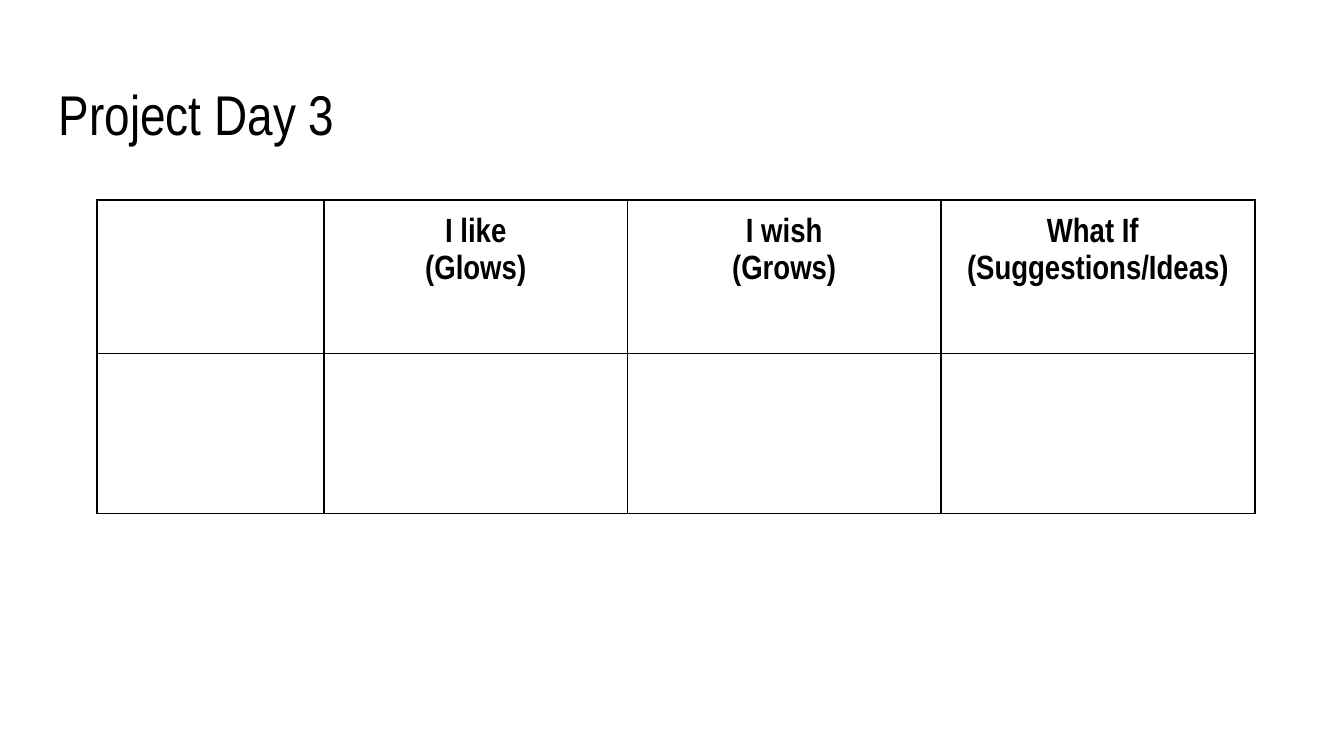
from dataclasses import dataclass

from lxml import etree
from pptx import Presentation
from pptx.dml.color import RGBColor
from pptx.enum import text
from pptx.oxml import ns
from pptx.util import Inches, Pt

BLACK = RGBColor(0, 0, 0)
WHITE = RGBColor(255, 255, 255)
PAGE_WIDTH = Inches(10)
PAGE_HEIGHT = PAGE_WIDTH * 9 // 16
COLUMN_INCHES = (1.69, 2.26, 2.33, 2.34)
ROW_INCHES = (1.14, 1.19)
MARGIN = Inches(0.1)
SIDES = ("left", "right", "top", "bottom")


@dataclass(frozen=True)
class Area:
    left: float
    top: float
    width: float
    height: float

    def lengths(self) -> tuple[int, ...]:
        return tuple(Inches(value) for value in
                     (self.left, self.top, self.width, self.height))


@dataclass(frozen=True)
class Line:
    words: str
    indent: float = 0


@dataclass(frozen=True)
class Heading:
    column: int
    lines: tuple[Line, Line]


HEADINGS = (
    Heading(1, (Line("I like"), Line("(Glows)"))),
    Heading(2, (Line("I wish"), Line("(Grows)"))),
    Heading(3, (Line("What If", 0.69), Line("(Suggestions/Ideas)"))),
)
TITLE_AREA = Area(0.34, 0.49, 9.32, 0.63)
TABLE_AREA = Area(0.72, 1.49, sum(COLUMN_INCHES), sum(ROW_INCHES))


def set_values(target, values: dict) -> None:
    for name, value in values.items():
        setattr(target, name, value)


def set_margins(target) -> None:
    set_values(target, {f"margin_{side}": MARGIN for side in SIDES})


def write_span(para, words: str, size: int, bold: bool) -> None:
    span = para.add_run()
    span.text = words
    set_values(span.font, {"name": "Arial Narrow", "size": Pt(size), "bold": bold})
    span.font.color.rgb = BLACK


def add_title(page, words: str) -> None:
    frame = page.shapes.add_textbox(*TITLE_AREA.lengths()).text_frame
    set_values(frame, {"word_wrap": True, "vertical_anchor": text.MSO_ANCHOR.TOP})
    set_margins(frame)
    write_span(frame.paragraphs[0], words, 30, False)


def style_cell(cell) -> None:
    set_margins(cell)
    properties = cell._tc.get_or_add_tcPr()
    for side in SIDES:
        border = etree.SubElement(
            properties, ns.qn(f"a:ln{side[0].upper()}"), w=str(Pt(1)))
        fill = etree.SubElement(border, ns.qn("a:solidFill"))
        etree.SubElement(fill, ns.qn("a:srgbClr"), val=str(BLACK))
    cell.fill.solid()
    cell.fill.fore_color.rgb = WHITE


def write_heading(cell, heading: Heading) -> None:
    frame = cell.text_frame
    for index, line in enumerate(heading.lines):
        para = frame.add_paragraph() if index else frame.paragraphs[0]
        alignment = text.PP_ALIGN.LEFT if line.indent else text.PP_ALIGN.CENTER
        set_values(para, {"alignment": alignment, "line_spacing": 1.15})
        if line.indent:
            para._p.get_or_add_pPr().set("marL", str(Inches(line.indent)))
        write_span(para, line.words, 18, True)


def add_feedback_table(page) -> None:
    table = page.shapes.add_table(
        len(ROW_INCHES), len(COLUMN_INCHES), *TABLE_AREA.lengths()).table
    set_values(table, {"first_row": False, "horz_banding": False})
    for column, width in zip(table.columns, COLUMN_INCHES):
        column.width = Inches(width)
    for row, height in zip(table.rows, ROW_INCHES):
        row.height = Inches(height)
    for cell in table.iter_cells():
        style_cell(cell)
    for heading in HEADINGS:
        write_heading(table.cell(0, heading.column), heading)


def main() -> None:
    deck = Presentation()
    set_values(deck, {"slide_width": PAGE_WIDTH, "slide_height": PAGE_HEIGHT})
    page = deck.slides.add_slide(deck.slide_layouts[6])
    add_title(page, "Project Day 3")
    add_feedback_table(page)
    deck.save("out.pptx")


if __name__ == "__main__":
    main()
